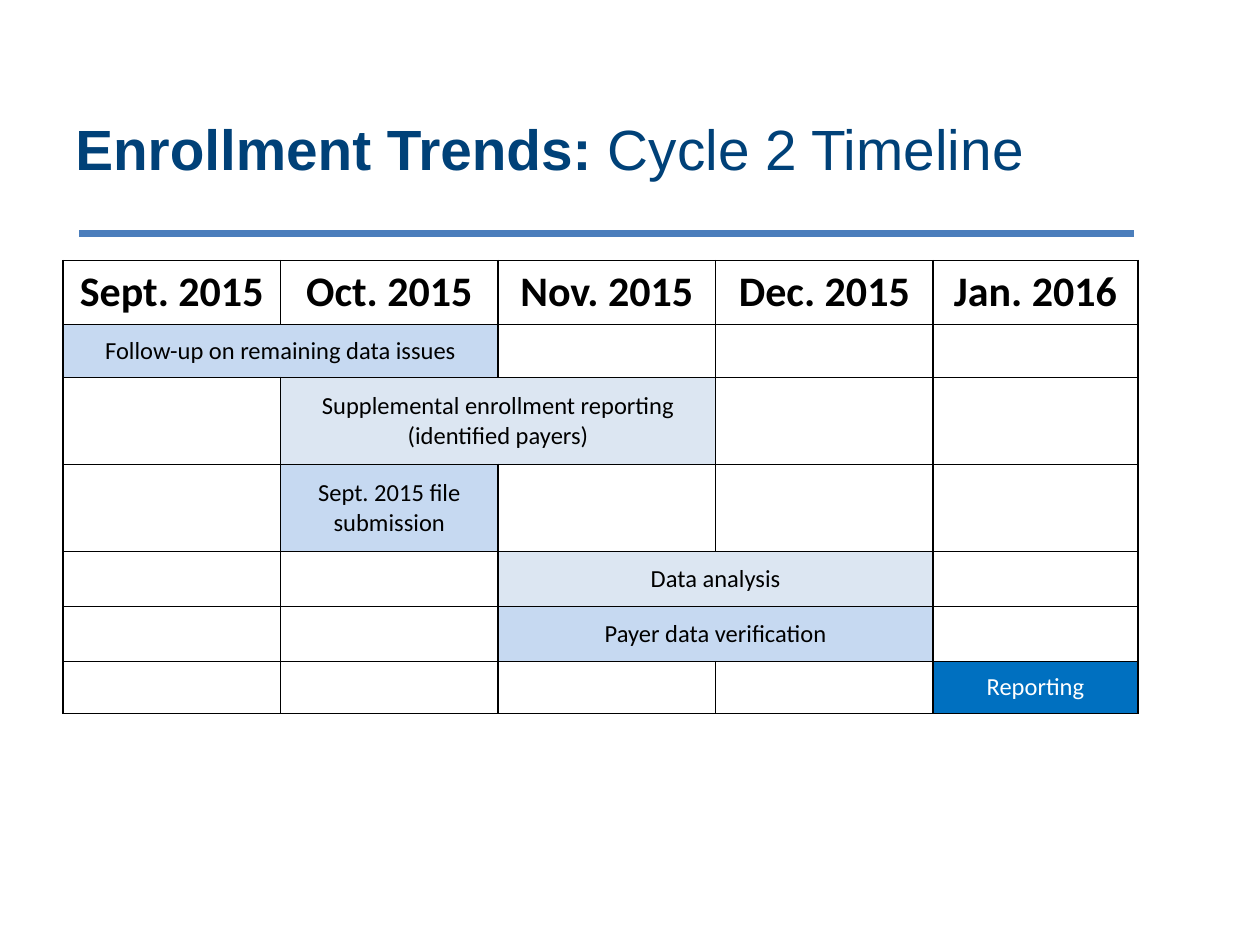
from lxml import etree
from pptx import Presentation
from pptx.dml.color import RGBColor
from pptx.enum.shapes import MSO_CONNECTOR
from pptx.enum.text import MSO_ANCHOR, PP_ALIGN
from pptx.oxml.ns import qn
from pptx.util import Pt

STRAIGHT = MSO_CONNECTOR.STRAIGHT
MIDDLE = MSO_ANCHOR.MIDDLE
CENTER = PP_ALIGN.CENTER

# Content
TITLE = [("Enrollment Trends: ", True), ("Cycle 2 Timeline", False)]
MONTHS = ["Sept. 2015", "Oct. 2015", "Nov. 2015", "Dec. 2015", "Jan. 2016"]
# One task per row: text, first month, months covered, fill, text colour
TASKS = [
    ("Follow-up on remaining data issues", 0, 2, "C6D9F1", "000000"),
    ("Supplemental enrollment reporting (identified payers)", 1, 2, "DCE6F2", "000000"),
    ("Sept. 2015 file submission", 1, 1, "C6D9F1", "000000"),
    ("Data analysis", 2, 2, "DCE6F2", "000000"),
    ("Payer data verification", 2, 2, "C6D9F1", "000000"),
    ("Reporting", 4, 1, "0070C0", "FFFFFF"),
]
MONTH_WIDTHS = [124.3] * 4 + [117]
ROW_HEIGHTS = [36.4, 30.2, 49.8, 49.8, 31.5, 31.5, 29.5]


def color(value):
    return RGBColor.from_string(value)


def add_run(paragraph, text, font, size, ink, bold=False):
    run = paragraph.add_run()
    run.text = text
    run.font.name = font
    run.font.size = Pt(size)
    run.font.bold = bold
    run.font.color.rgb = color(ink)


def add_borders(cell):
    properties = cell._tc.get_or_add_tcPr()
    for side in ("a:lnL", "a:lnR", "a:lnT", "a:lnB"):
        border = etree.SubElement(properties, qn(side), w=str(Pt(1)))
        fill = etree.SubElement(border, qn("a:solidFill"))
        etree.SubElement(fill, qn("a:srgbClr"), val="000000")


def write_cell(cell, text, size, ink="000000", bold=False):
    paragraph = cell.text_frame.paragraphs[0]
    paragraph.alignment = CENTER
    add_run(paragraph, text, "Calibri", size, ink, bold)


prs = Presentation()
prs.slide_width, prs.slide_height = Pt(720), Pt(540)
slide = prs.slides.add_slide(prs.slide_layouts[6])

# Rule under the title
rule = slide.shapes.add_connector(STRAIGHT, Pt(45.4), Pt(133.2), Pt(648), Pt(133.2))
rule.line.color.rgb = color("4B7EBC")
rule.line.width = Pt(4)
etree.SubElement(rule._element.spPr, qn("a:effectLst"))

# Title
title = slide.shapes.add_textbox(Pt(36), Pt(44.6), Pt(612), Pt(80)).text_frame
title.word_wrap = True
title.vertical_anchor = MIDDLE
for text, bold in TITLE:
    add_run(title.paragraphs[0], text, "Arial", 32.4, "004178", bold)

# Timeline grid
timeline = slide.shapes.add_table(
    len(ROW_HEIGHTS), len(MONTHS), Pt(36), Pt(149),
    Pt(sum(MONTH_WIDTHS)), Pt(sum(ROW_HEIGHTS))).table
timeline.first_row = timeline.horz_banding = False
for column, width in zip(timeline.columns, MONTH_WIDTHS):
    column.width = Pt(width)
for row, height in zip(timeline.rows, ROW_HEIGHTS):
    row.height = Pt(height)
for cell in timeline.iter_cells():
    add_borders(cell)
    cell.fill.background()
    cell.vertical_anchor = MIDDLE
    cell.text_frame.paragraphs[0].font.size = Pt(14)

# Month headings
for month, heading in enumerate(MONTHS):
    write_cell(timeline.cell(0, month), heading, 24, bold=True)

# Task bars
for row, (task, start, months, shade, ink) in enumerate(TASKS, 1):
    bar = timeline.cell(row, start)
    if months > 1:
        bar.merge(timeline.cell(row, start + months - 1))
    bar.fill.solid()
    bar.fill.fore_color.rgb = color(shade)
    write_cell(bar, task, 14, ink)

prs.save("out.pptx")
